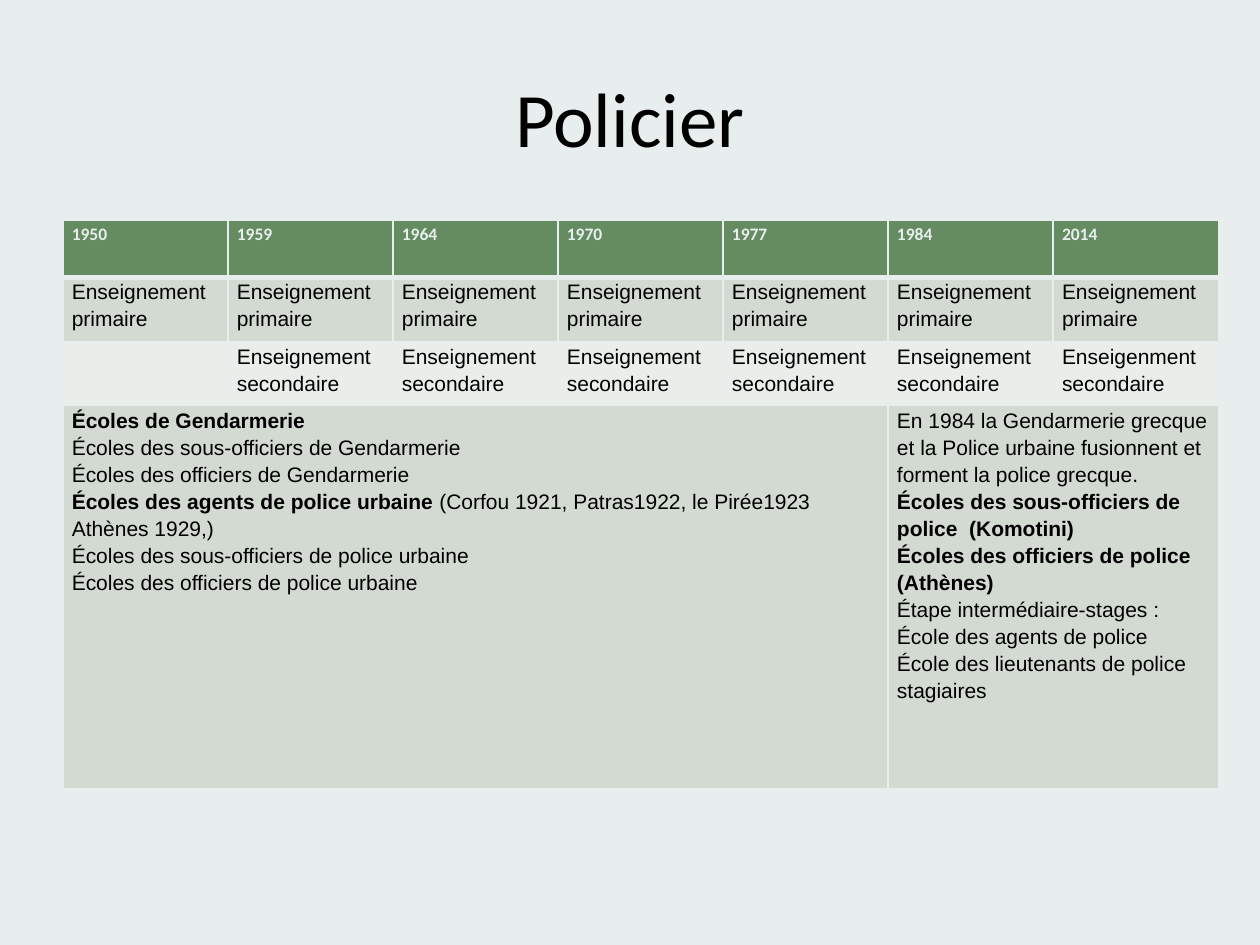
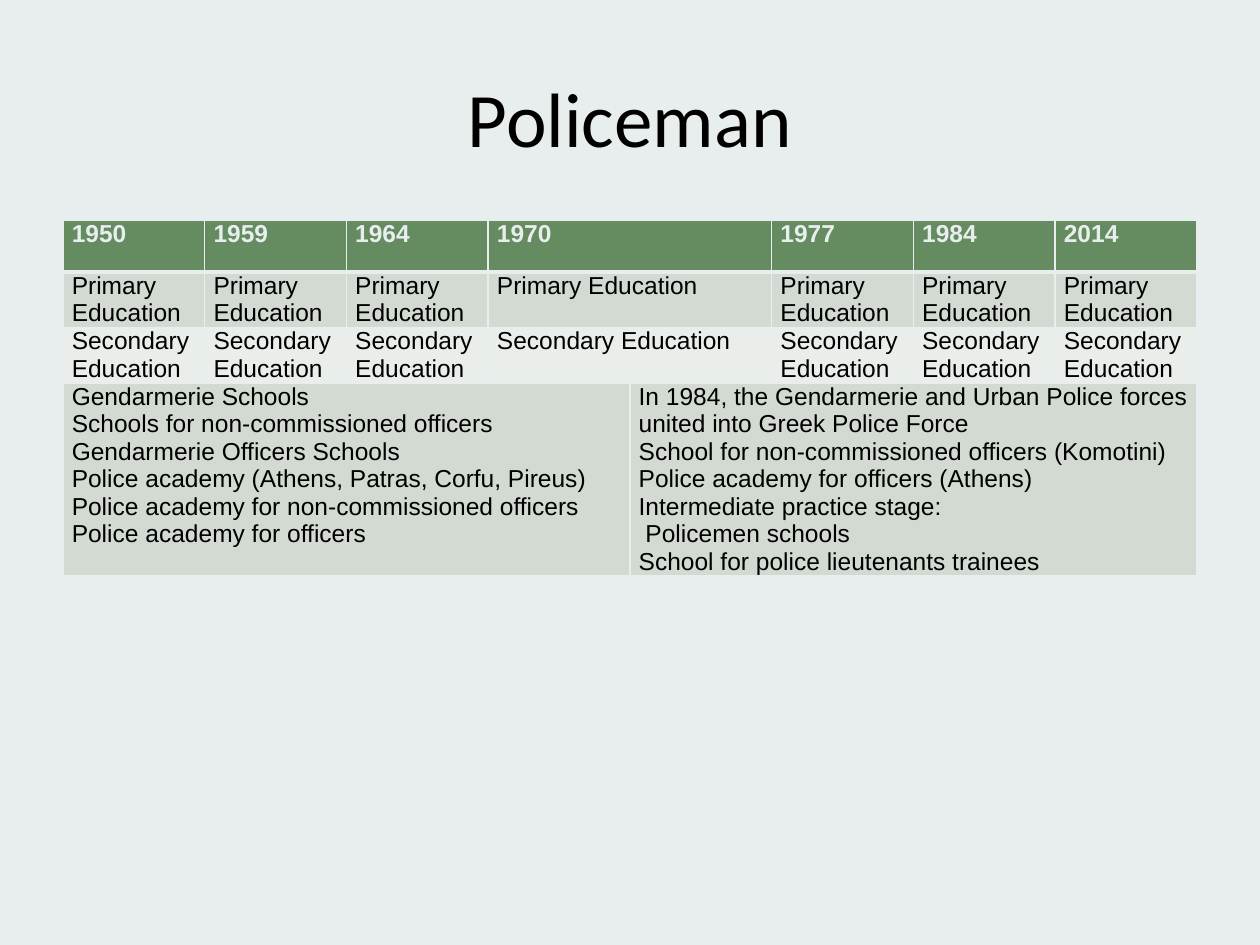
from dataclasses import dataclass

from lxml.etree import SubElement
from pptx import Presentation
from pptx.dml.color import RGBColor
from pptx.enum.text import MSO_ANCHOR, PP_ALIGN
from pptx.oxml.ns import qn
from pptx.util import Inches, Pt

BACKGROUND = "E8EEEE"
HEADER_FILL = "648C60"
BAND_FILL = "D3DAD2"
LIGHT_FILL = "EAEEEA"
BLACK = "000000"
ROW_FILLS = [HEADER_FILL, BAND_FILL, LIGHT_FILL, BAND_FILL]
YEARS = ["1950", "1959", "1964", "1970", "1977", "1984", "2014"]


@dataclass(frozen=True)
class TextRun:
    text: str
    bold: bool = False


@dataclass(frozen=True)
class TableCell:
    paragraphs: list[list[TextRun]]
    span: int = 1


@dataclass(frozen=True)
class TextStyle:
    font: str
    size: int
    color: str


@dataclass(frozen=True)
class Timeline:
    title: str
    width: float
    row_heights: list[float]
    rows: list[list[TableCell]]
    header_style: TextStyle
    body_style: TextStyle
    line_spacing: float


def color(hex_value: str) -> RGBColor:
    return RGBColor.from_string(hex_value)


def plain(text: str) -> list[TextRun]:
    return [TextRun(text)]


def strong(text: str) -> list[TextRun]:
    return [TextRun(text, True)]


def single_cells(texts: list[str], spans: list[int], bold: bool = False) -> list[TableCell]:
    return [
        TableCell([[TextRun(text, bold)]] if text else [], span)
        for text, span in zip(texts, spans)
    ]


def add_run(paragraph, run: TextRun, style: TextStyle) -> None:
    text_run = paragraph.add_run()
    text_run.text = run.text
    text_run.font.name = style.font
    text_run.font.size = Pt(style.size)
    text_run.font.bold = run.bold
    text_run.font.color.rgb = color(style.color)


def set_borders(cell, widths: dict[str, int]) -> None:
    properties = cell._tc.get_or_add_tcPr()
    for side, width in widths.items():
        line = SubElement(properties, qn(f"a:ln{side}"), w=str(Pt(width)))
        fill = SubElement(line, qn("a:solidFill"))
        SubElement(fill, qn("a:srgbClr"), val=BACKGROUND)


def format_cell(cell, row_index: int) -> None:
    widths = {"L": 1, "R": 1, "T": 1, "B": 1}
    if row_index == 0:
        widths["B"] = 3
    elif row_index == 1:
        widths["T"] = 3
    set_borders(cell, widths)
    cell.fill.solid()
    cell.fill.fore_color.rgb = color(ROW_FILLS[row_index])
    cell.margin_left = cell.margin_right = Inches(0.07)
    cell.margin_top = cell.margin_bottom = Inches(0)


def write_cell(cell, content: TableCell, style: TextStyle, line_spacing: float) -> None:
    frame = cell.text_frame
    for index, runs in enumerate(content.paragraphs):
        paragraph = frame.add_paragraph() if index else frame.paragraphs[0]
        paragraph.line_spacing = line_spacing
        for run in runs:
            add_run(paragraph, run, style)


def add_title(slide, text: str) -> None:
    title = slide.shapes.title
    title.left, title.top = Inches(0.5), Inches(0.3)
    title.width, title.height = Inches(9), Inches(1.25)
    title.text_frame.vertical_anchor = MSO_ANCHOR.MIDDLE
    paragraph = title.text_frame.paragraphs[0]
    paragraph.alignment = PP_ALIGN.CENTER
    add_run(paragraph, TextRun(text), TextStyle("Calibri", 44, BLACK))


def add_timeline_table(slide, timeline: Timeline) -> None:
    column_count = sum(cell.span for cell in timeline.rows[0])
    table = slide.shapes.add_table(
        len(timeline.rows), column_count, Inches(0.5), Inches(1.75),
        Inches(timeline.width), Inches(sum(timeline.row_heights)),
    ).table
    table.horz_banding = False
    for column in table.columns:
        column.width = Inches(timeline.width / column_count)
    for row_index, contents in enumerate(timeline.rows):
        table.rows[row_index].height = Inches(timeline.row_heights[row_index])
        for cell in table.rows[row_index].cells:
            format_cell(cell, row_index)
        style = timeline.body_style if row_index else timeline.header_style
        column_index = 0
        for content in contents:
            cell = table.cell(row_index, column_index)
            column_index += content.span
            if content.span > 1:
                cell.merge(table.cell(row_index, column_index - 1))
            write_cell(cell, content, style, timeline.line_spacing)


def add_timeline_slide(presentation, timeline: Timeline) -> None:
    slide = presentation.slides.add_slide(presentation.slide_layouts[5])
    add_title(slide, timeline.title)
    add_timeline_table(slide, timeline)


EQUAL_SPANS = [1] * 7
WIDE_1970_SPANS = [1, 1, 1, 2, 1, 1, 1]

FRENCH_TIMELINE = Timeline(
    title="Policier",
    width=9.17,
    row_heights=[0.45, 0.51, 0.51, 3.04],
    rows=[
        single_cells(YEARS, EQUAL_SPANS, bold=True),
        single_cells(["Enseignement primaire"] * 7, EQUAL_SPANS),
        single_cells(
            ["", *["Enseignement secondaire"] * 5, "Enseigenment secondaire"], EQUAL_SPANS
        ),
        [
            TableCell([
                strong("Écoles de Gendarmerie"),
                plain("Écoles des sous-officiers de Gendarmerie"),
                plain("Écoles des officiers de Gendarmerie"),
                strong("Écoles des agents de police urbaine")
                + plain(" (Corfou 1921, Patras1922, le Pirée1923 Athènes 1929,)"),
                plain("Écoles des sous-officiers de police urbaine"),
                plain("Écoles des officiers de police urbaine"),
            ], 5),
            TableCell([
                plain("En 1984 la Gendarmerie grecque et la Police urbaine fusionnent "
                      "et forment la police grecque."),
                strong("Écoles des sous-officiers de police  (Komotini)"),
                strong("Écoles des officiers de police (Athènes)"),
                plain("Étape intermédiaire-stages : École des agents de police"),
                plain("École des lieutenants de police stagiaires"),
            ], 2),
        ],
    ],
    header_style=TextStyle("Calibri", 10, BACKGROUND),
    body_style=TextStyle("Arial", 12, BLACK),
    line_spacing=1.15,
)

ENGLISH_TIMELINE = Timeline(
    title="Policeman",
    width=9,
    row_heights=[0.41, 0.44, 0.44, 1.52],
    rows=[
        single_cells(YEARS, WIDE_1970_SPANS, bold=True),
        single_cells(["Primary Education"] * 7, WIDE_1970_SPANS),
        single_cells(["Secondary Education"] * 7, WIDE_1970_SPANS),
        [
            TableCell([
                plain("Gendarmerie Schools"),
                plain("Schools for non-commissioned officers"),
                plain("Gendarmerie Officers Schools"),
                plain("Police academy (Athens, Patras, Corfu, Pireus)"),
                plain("Police academy for non-commissioned officers"),
                plain("Police academy for officers"),
            ], 4),
            TableCell([
                plain("In 1984, the Gendarmerie and Urban Police forces united "
                      "into Greek Police Force"),
                plain("School for non-commissioned officers (Komotini)"),
                plain("Police academy for officers (Athens)"),
                plain("Intermediate practice stage:"),
                plain(" Policemen schools"),
                plain("School for police lieutenants trainees"),
            ], 4),
        ],
    ],
    header_style=TextStyle("Arial", 14, BACKGROUND),
    body_style=TextStyle("Arial", 14, BLACK),
    line_spacing=1.0,
)


def main() -> None:
    presentation = Presentation()
    presentation.slide_width = Inches(10)
    presentation.slide_height = Inches(7.5)
    background = presentation.slide_master.background.fill
    background.solid()
    background.fore_color.rgb = color(BACKGROUND)
    for timeline in (FRENCH_TIMELINE, ENGLISH_TIMELINE):
        add_timeline_slide(presentation, timeline)
    presentation.save("out.pptx")


if __name__ == "__main__":
    main()
